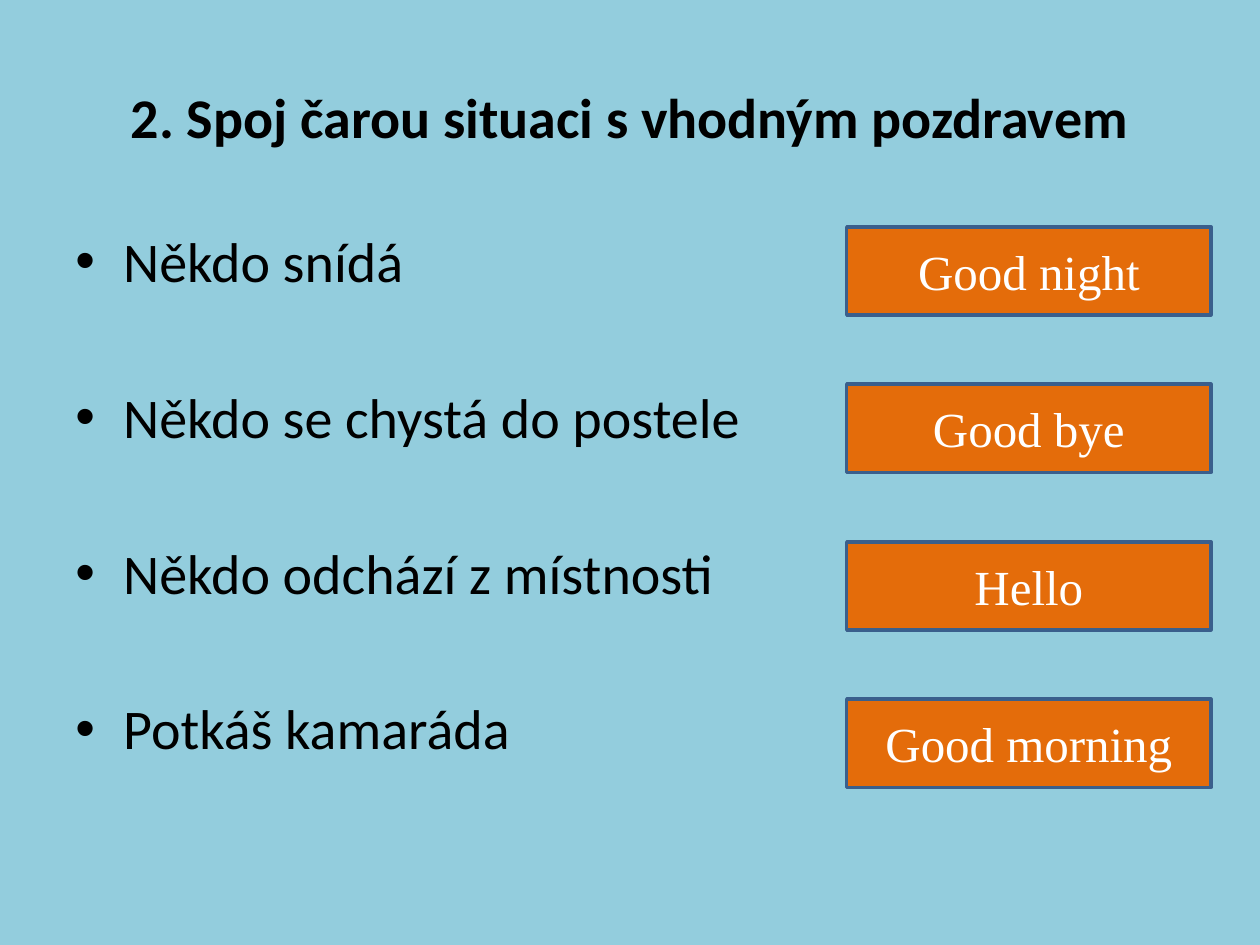
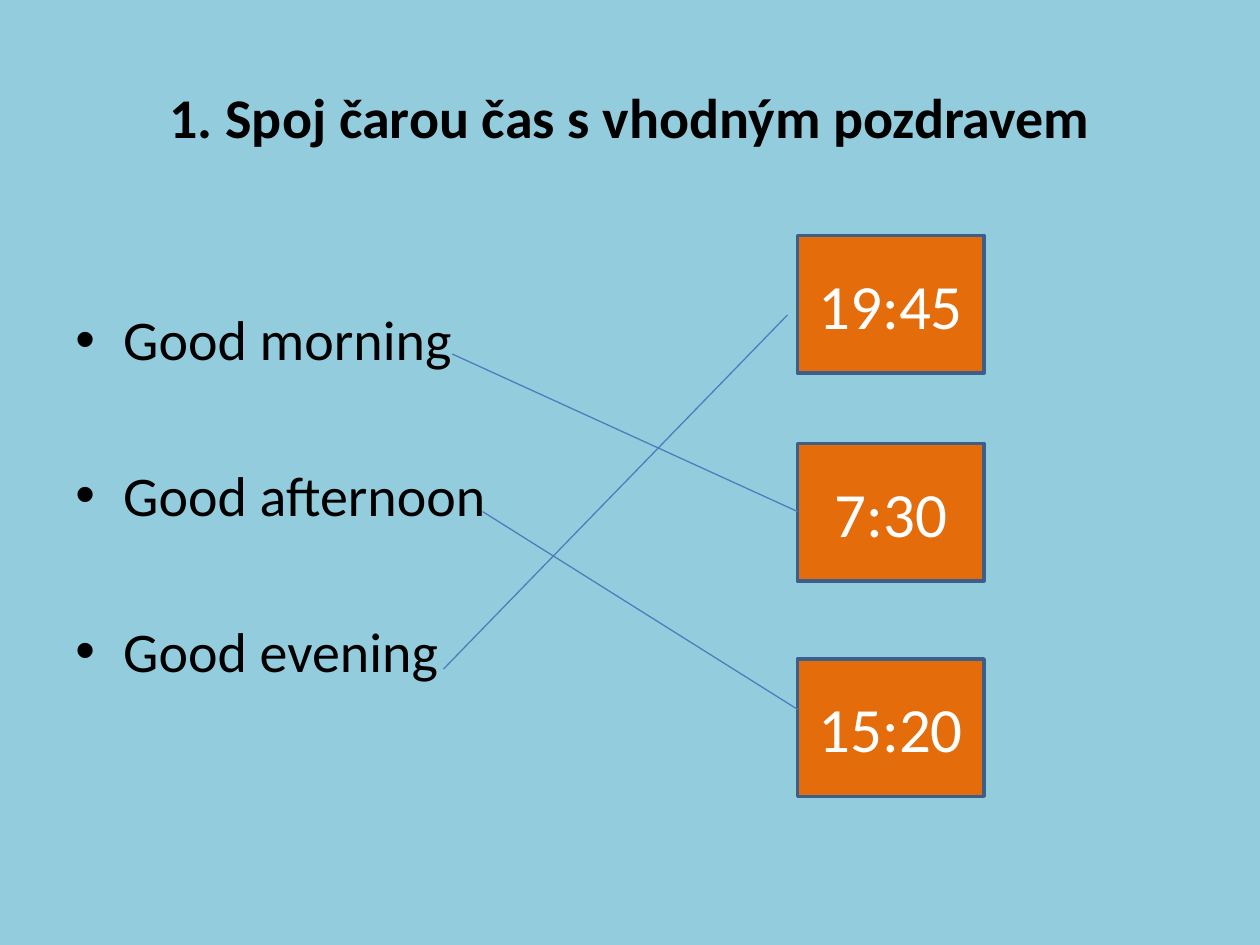
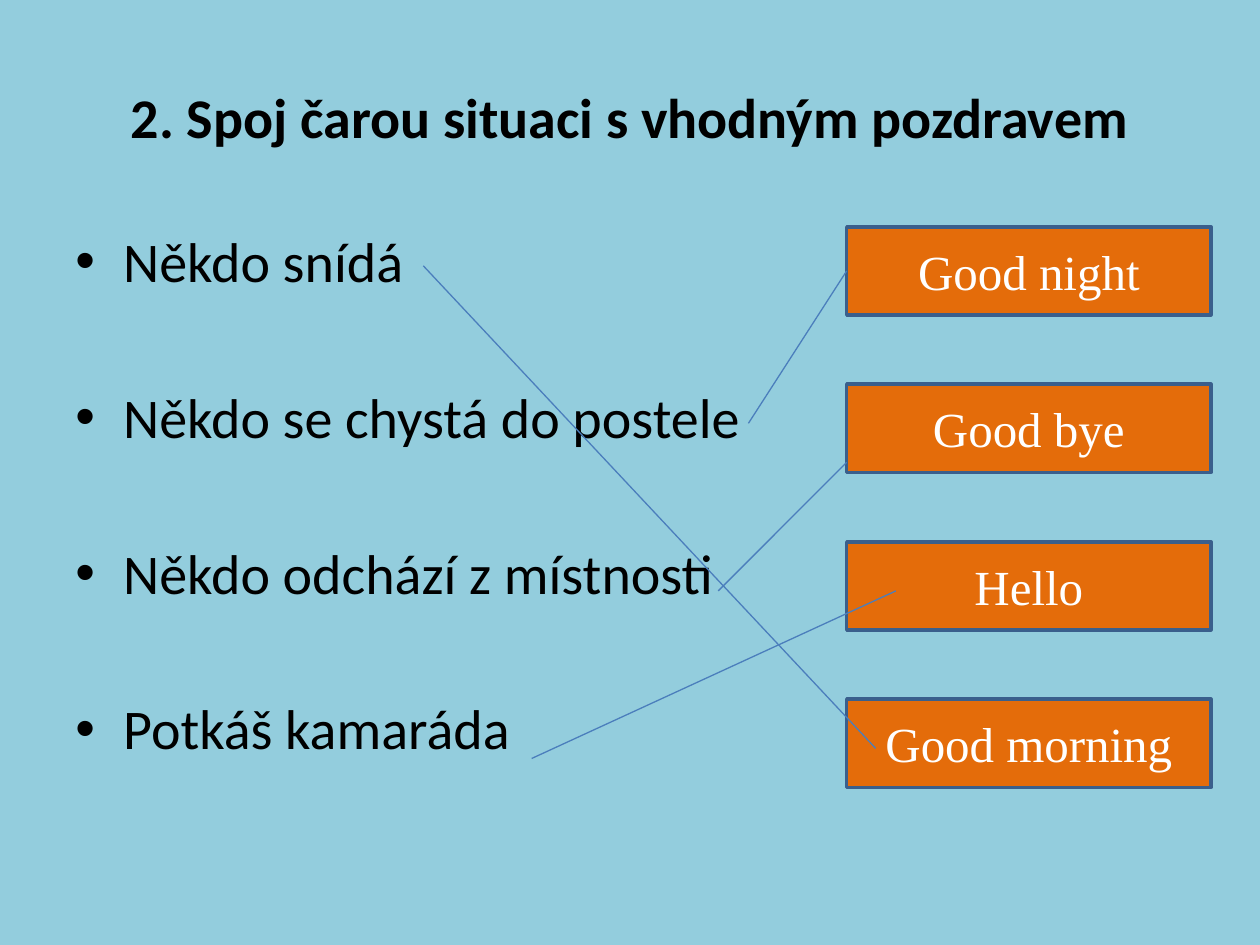
from pptx import Presentation
from pptx.dml.color import RGBColor
from pptx.enum.shapes import MSO_CONNECTOR, MSO_SHAPE
from pptx.enum.text import MSO_ANCHOR, PP_ALIGN
from pptx.oxml.ns import qn
from pptx.util import Inches, Pt
from lxml import etree

CENTER, LEFT = PP_ALIGN.CENTER, PP_ALIGN.LEFT
MIDDLE, TOP = MSO_ANCHOR.MIDDLE, MSO_ANCHOR.TOP
RECTANGLE, STRAIGHT = MSO_SHAPE.RECTANGLE, MSO_CONNECTOR.STRAIGHT

COLORS = {
    "background": "93CDDD",
    "text": "000000",
    "answer": "E46C0A",
    "answer_border": "3A5F8C",
    "answer_text": "FFFFFF",
    "match": "4B7EBC",
}
TITLE_FONT = {"name": "Calibri", "size": Pt(32), "bold": True}
PROMPT_FONT = {"name": "Calibri", "size": Pt(32), "bold": False}
TIME_FONT = {"name": "Calibri", "size": Pt(36)}
GREETING_FONT = {"name": "Times New Roman", "size": Pt(28)}

TITLE_BOX = (0.5, 0.3, 9, 1.25)
BODY_BOX = (0.5, 1.75, 9, 4.95)
PROMPT_GAP = Pt(50.6)
INDENT = Inches(0.38)

TIME_TASK = {
    "title": "1. Spoj čarou čas s vhodným pozdravem",
    "prompts": ["Good morning", "Good afternoon", "Good evening"],
    "prompt_inset": 0.67,
    "answers": ["19:45", "7:30", "15:20"],
    "answer_left": 5.83,
    "answer_tops": [0.12, 1.77, 3.48],
    "answer_size": (1.48, 1.09),
    "answer_font": TIME_FONT,
}
SITUATION_TASK = {
    "title": "2. Spoj čarou situaci s vhodným pozdravem",
    "prompts": ["Někdo snídá", "Někdo se chystá do postele",
                "Někdo odchází z místnosti", "Potkáš kamaráda"],
    "prompt_inset": 0.05,
    "answers": ["Good night", "Good bye", "Hello", "Good morning"],
    "answer_left": 6.22,
    "answer_tops": [0.05 + 1.25 * row for row in range(4)],
    "answer_size": (2.89, 0.7),
    "answer_font": GREETING_FONT,
}
TIME_MATCHES = [
    ((3.09, 1.06), (5.83, 2.31)),
    ((3.33, 2.31), (5.83, 3.88)),
    ((3.02, 3.56), (5.75, 0.75)),
]
SITUATION_MATCHES = [
    ((2.86, 0.36), (6.45, 4.19)),
    ((5.44, 1.61), (6.22, 0.4)),
    ((5.2, 2.94), (6.22, 1.92)),
    ((3.72, 4.27), (6.61, 2.94)),
]


def color(key):
    return RGBColor.from_string(COLORS[key])


def apply_format(target, values):
    for attribute, value in values.items():
        setattr(target, attribute, value)


def write(paragraph, text, font, color_key, alignment):
    paragraph.alignment = alignment
    run = paragraph.add_run()
    run.text = text
    apply_format(run.font, font)
    run.font.color.rgb = color(color_key)


def add_bullet(paragraph):
    properties = paragraph._p.get_or_add_pPr()
    properties.set("marL", str(INDENT))
    properties.set("indent", str(-INDENT))
    etree.SubElement(properties, qn("a:buFont")).set("typeface", "Arial")
    etree.SubElement(properties, qn("a:buChar")).set("char", "•")


def add_title(slide, box, text):
    frame = slide.shapes.add_textbox(*map(Inches, box)).text_frame
    apply_format(frame, {"word_wrap": True, "vertical_anchor": MIDDLE})
    write(frame.paragraphs[0], text, TITLE_FONT, "text", CENTER)


def add_prompts(slide, box, prompts, top_inset):
    frame = slide.shapes.add_textbox(*map(Inches, box)).text_frame
    apply_format(frame, {"word_wrap": True, "vertical_anchor": TOP,
                         "margin_top": Inches(top_inset)})
    for row, prompt in enumerate(prompts):
        paragraph = frame.add_paragraph() if row else frame.paragraphs[0]
        paragraph.space_before = PROMPT_GAP if row else Pt(0)
        write(paragraph, prompt, PROMPT_FONT, "text", LEFT)
        add_bullet(paragraph)


def add_answer(slide, box, text, font):
    answer = slide.shapes.add_shape(RECTANGLE, *map(Inches, box))
    answer.shadow.inherit = False
    answer.fill.solid()
    answer.fill.fore_color.rgb = color("answer")
    answer.line.color.rgb = color("answer_border")
    answer.line.width = Pt(2)
    apply_format(answer.text_frame, {"word_wrap": True, "vertical_anchor": MIDDLE})
    write(answer.text_frame.paragraphs[0], text, font, "answer_text", CENTER)


def add_matches(slide, box, matches):
    left, top = box[:2]
    for ends in matches:
        points = [Inches(value) for x, y in ends for value in (left + x, top + y)]
        match = slide.shapes.add_connector(STRAIGHT, *points)
        match.line.color.rgb = color("match")
        match.line.width = Pt(0.75)
        etree.SubElement(match._element.spPr, qn("a:effectLst"))


def add_task_slide(deck, task, matches=()):
    slide = deck.slides.add_slide(deck.slide_layouts[6])
    add_title(slide, TITLE_BOX, task["title"])
    add_prompts(slide, BODY_BOX, task["prompts"], task["prompt_inset"])
    left, top = BODY_BOX[:2]
    for text, offset in zip(task["answers"], task["answer_tops"]):
        box = (left + task["answer_left"], top + offset, *task["answer_size"])
        add_answer(slide, box, text, task["answer_font"])
    add_matches(slide, BODY_BOX, matches)


def main():
    deck = Presentation()
    apply_format(deck, {"slide_width": Inches(10), "slide_height": Inches(7.5)})
    background = deck.slide_master.background.fill
    background.solid()
    background.fore_color.rgb = color("background")
    add_task_slide(deck, SITUATION_TASK)
    add_task_slide(deck, TIME_TASK, TIME_MATCHES)
    add_task_slide(deck, SITUATION_TASK, SITUATION_MATCHES)
    deck.save("out.pptx")


if __name__ == "__main__":
    main()
